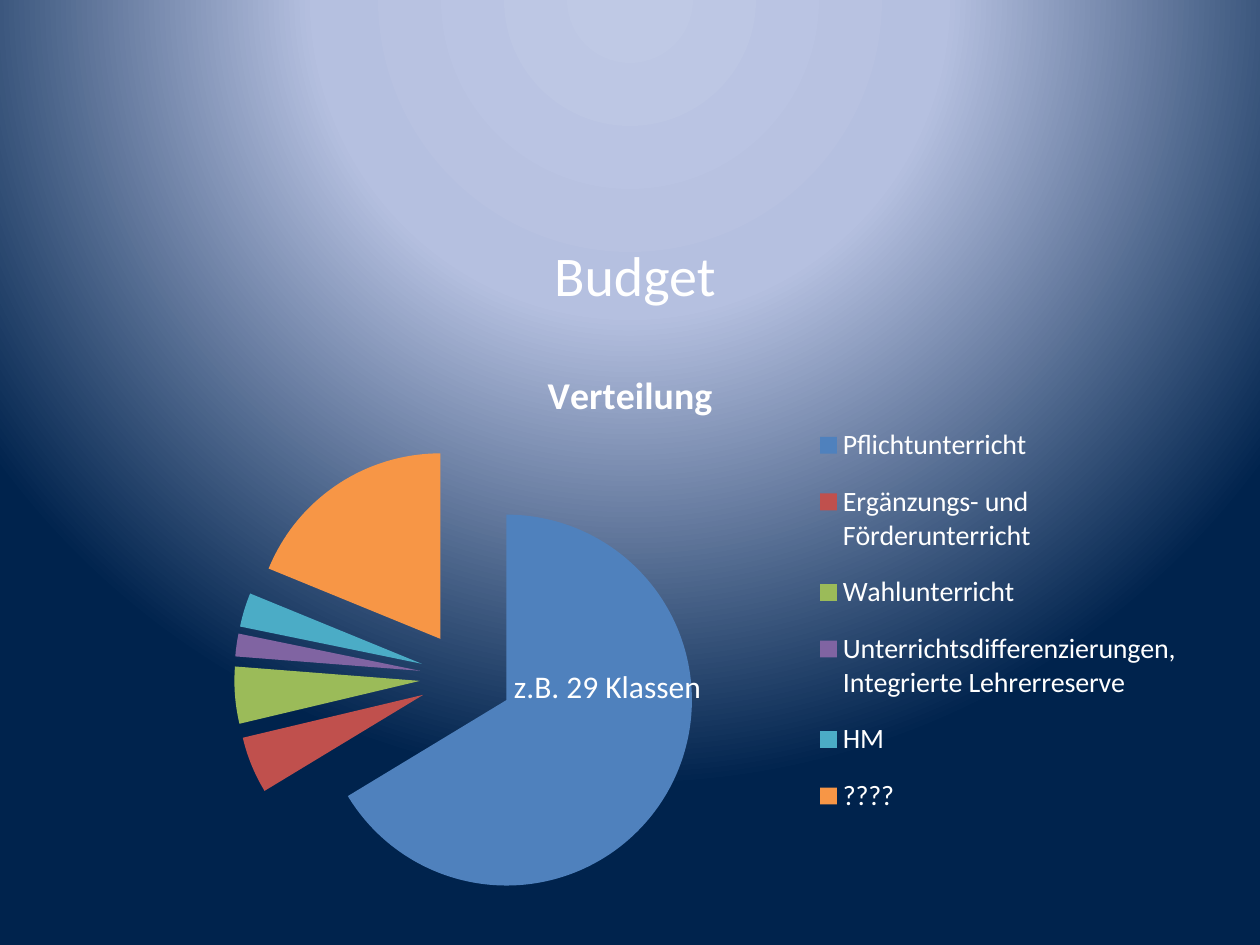
from lxml import etree
from pptx import Presentation
from pptx import util as u
from pptx.chart.data import CategoryChartData
from pptx.dml.color import RGBColor
from pptx.enum import chart as charts, text
from pptx.oxml import parse_xml
from pptx.oxml.ns import nsdecls, qn

COLORS = {
    "white": "FFFFFF", "glow": "BFC9E5", "haze": "B5C0E0", "night": "00234D",
    "blue": "4F81BD", "red": "C0504D", "green": "9BBB59",
    "purple": "8064A2", "teal": "4BACC6", "orange": "F79646",
}

# category: (share, colour)
BUDGET_SHARES = {
    "Pflichtunterricht": (67, "blue"),
    "Ergänzungs- und Förderunterricht": (5, "red"),
    "Wahlunterricht": (5, "green"),
    "Unterrichtsdifferenzierungen, Integrierte Lehrerreserve": (2, "purple"),
    "HM": (3, "teal"),
    "????": (19, "orange"),
}


def color(name):
    return RGBColor.from_string(COLORS[name])


def manual_layout(**settings):
    """Return a layout element; x, y, w and h are fractions of the chart."""
    settings = {"xMode": "edge", "yMode": "edge", **settings}
    items = "".join(f'<c:{tag} val="{value}"/>' for tag, value in settings.items())
    return parse_xml(
        f'<c:layout {nsdecls("c")}><c:manualLayout>{items}</c:manualLayout></c:layout>')


class SlideBuilder:
    """Holds the text style and the slide being built."""

    def __init__(self, slide, font_name="Calibri", font_color="white"):
        self.slide = slide
        self.font_name = font_name
        self.font_color = font_color

    def style(self, font, size, bold=False):
        values = {"name": self.font_name, "size": u.Pt(size), "bold": bold}
        for attribute, value in values.items():
            setattr(font, attribute, value)
        font.color.rgb = color(self.font_color)

    def background(self, stops):
        """Fill the background with circles centred above the top edge."""
        stop_xml = "".join(
            f'<a:gs pos="{percent * 1000}"><a:srgbClr val="{COLORS[name]}"/></a:gs>'
            for percent, name in stops)
        self.slide.element.cSld.insert(0, parse_xml(
            f'<p:bg {nsdecls("p", "a")}><p:bgPr><a:gradFill rotWithShape="1">'
            f'<a:gsLst>{stop_xml}</a:gsLst><a:path path="circle">'
            '<a:fillToRect l="50000" t="-80000" r="50000" b="180000"/></a:path>'
            '</a:gradFill><a:effectLst/></p:bgPr></p:bg>'))

    def heading(self, words, left, top, width, height):
        shape = self.slide.placeholders[1]
        place = {"left": left, "top": top, "width": width, "height": height}
        for attribute, value in place.items():
            setattr(shape, attribute, u.Cm(value))
        shape.text_frame.text = words
        paragraph = shape.text_frame.paragraphs[0]
        paragraph.alignment = text.PP_ALIGN.CENTER
        self.style(paragraph.runs[0].font, 32)

    def label(self, words, left, top, width, height):
        shape = self.slide.shapes.add_textbox(*map(u.Cm, (left, top, width, height)))
        frame = shape.text_frame
        frame.word_wrap = True
        frame.auto_size = text.MSO_AUTO_SIZE.SHAPE_TO_FIT_TEXT
        frame.text = words
        self.style(frame.paragraphs[0].runs[0].font, 18)

    def pie(self, title, shares, left, top, width, height):
        data = CategoryChartData()
        data.categories = list(shares)
        data.add_series(title, [share for share, _ in shares.values()])
        chart = self.slide.shapes.add_chart(
            charts.XL_CHART_TYPE.PIE, *map(u.Cm, (left, top, width, height)), data).chart
        self.style(chart.font, 18)

        chart.has_title = True
        chart.chart_title.text_frame.text = title
        title_run = chart.chart_title.text_frame.paragraphs[0].runs[0]
        self.style(title_run.font, 21.6, bold=True)

        chart.has_legend = True
        chart.legend.position = charts.XL_LEGEND_POSITION.RIGHT
        chart.legend.include_in_layout = False
        self.style(chart.legend.font, 16)

        plot = chart.plots[0]
        plot.vary_by_categories = True
        series = plot.series[0]
        for index, (_, fill_name) in enumerate(shares.values()):
            fill = series.points[index].format.fill
            fill.solid()
            fill.fore_color.rgb = color(fill_name)
        self.explode(series, 25)
        self.place_parts(chart)

    def explode(self, series, percent):
        explosion = etree.Element(qn("c:explosion"), val=str(percent))
        series._element.find(qn("c:tx")).addnext(explosion)

    def place_parts(self, chart):
        """Fix the plot on the left and a tall legend on the right."""
        plot_area = chart._chartSpace.chart.plotArea
        legend = chart.legend._element
        for part in (plot_area, legend):
            for layout in part.findall(qn("c:layout")):
                part.remove(layout)
        plot_area.insert(0, manual_layout(
            layoutTarget="inner", x=0.04, y=0.18, w=0.63, h=0.82))
        legend.find(qn("c:legendPos")).addnext(
            manual_layout(x=0.66, y=0.11, w=0.33, h=0.76))


def main():
    presentation = Presentation()
    presentation.slide_width, presentation.slide_height = u.Cm(25.4), u.Cm(19.05)
    slide = presentation.slides.add_slide(presentation.slide_layouts[0])
    empty_title = slide.shapes.title.element
    empty_title.getparent().remove(empty_title)

    builder = SlideBuilder(slide)
    builder.background([(0, "glow"), (40, "haze"), (100, "night")])
    builder.heading("Budget", 3.91, 4.72, 17.78, 4.88)
    builder.pie("Verteilung", BUDGET_SHARES, 1.3, 6.93, 22.81, 11.4)
    builder.label("z.B. 29 Klassen", 10.11, 13.32, 4.39, 1.02)
    presentation.save("out.pptx")


if __name__ == "__main__":
    main()
